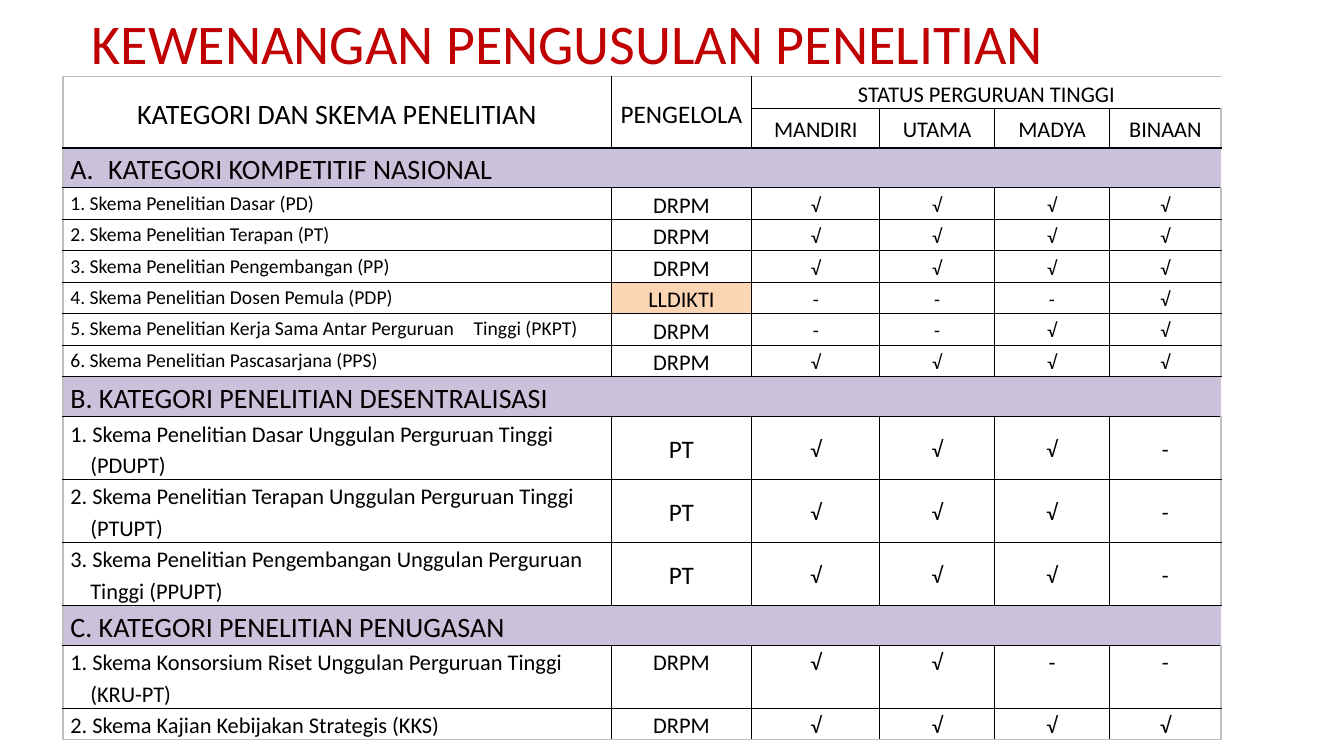
from dataclasses import dataclass

from lxml.etree import SubElement
from pptx import Presentation
from pptx.dml.color import RGBColor
from pptx.enum.text import MSO_ANCHOR, PP_ALIGN
from pptx.oxml.ns import qn
from pptx.util import Pt


@dataclass(frozen=True)
class Theme:
    """Colours and type sizes."""
    font: str = "Calibri"
    title: str = "C00000"
    ink: str = "000000"
    edge: str = "BFBFBF"
    band: str = "CCC1DA"
    mark: str = "FCD5B5"
    huge: int = 40
    head: int = 20
    large: int = 18
    body: int = 16
    small: int = 14


@dataclass(frozen=True)
class Group:
    """A research category and the looks of its rows."""
    name: str
    rows: tuple
    label: int
    owner: int
    tick: int
    anchor: MSO_ANCHOR
    auto: bool = False


THEME = Theme()
PX = 9525
COLS = (522, 134, 122, 109, 110, 106)
LINE, BAND = 30, 38
INSET, HANG, NUMBER, TAB = 7, 19, 36, 382
LEVELS = ("MANDIRI", "UTAMA", "MADYA", "BINAAN")
MID, TOP = MSO_ANCHOR.MIDDLE, MSO_ANCHOR.TOP
GROUPS = (
    Group("KATEGORI KOMPETITIF NASIONAL", (
        ("1. Skema Penelitian Dasar (PD)", "DRPM", "√√√√"),
        ("2. Skema Penelitian Terapan (PT)", "DRPM", "√√√√"),
        ("3. Skema Penelitian Pengembangan (PP)", "DRPM", "√√√√"),
        ("4. Skema Penelitian Dosen Pemula (PDP)", "LLDIKTI", "---√"),
        ("5. Skema Penelitian Kerja Sama Antar Perguruan\tTinggi (PKPT)",
         "DRPM", "--√√"),
        ("6. Skema Penelitian Pascasarjana (PPS)", "DRPM", "√√√√"),
    ), THEME.small, THEME.body, THEME.small, MID, True),
    Group("B. KATEGORI PENELITIAN DESENTRALISASI", (
        ("1. Skema Penelitian Dasar Unggulan Perguruan Tinggi\n(PDUPT)",
         "PT", "√√√-"),
        ("2. Skema Penelitian Terapan Unggulan Perguruan Tinggi\n(PTUPT)",
         "PT", "√√√-"),
        ("3. Skema Penelitian Pengembangan Unggulan Perguruan\nTinggi (PPUPT)",
         "PT", "√√√-"),
    ), THEME.body, THEME.large, THEME.body, MID),
    Group("C. KATEGORI PENELITIAN PENUGASAN", (
        ("1. Skema Konsorsium Riset Unggulan Perguruan Tinggi\n(KRU-PT)",
         "DRPM", "√√--"),
        ("2. Skema Kajian Kebijakan Strategis (KKS)", "DRPM", "√√√√"),
    ), THEME.body, THEME.body, THEME.body, TOP),
)


def style(para, size, color=THEME.ink, align=PP_ALIGN.LEFT, space=1.15):
    """Set the type and spacing of a paragraph."""
    para.font.name = THEME.font
    para.font.size = Pt(size)
    para.font.color.rgb = RGBColor.from_string(color)
    para.alignment = align
    para.line_spacing = space


def indent(para, left, first=0):
    """Indent a paragraph and return its properties."""
    props = para._p.get_or_add_pPr()
    props.set("marL", str(left * PX))
    props.set("indent", str(first * PX))
    return props


def insert(props, tag, before="a:defRPr"):
    """Add a paragraph property ahead of the font."""
    item = SubElement(props, qn(tag))
    props.find(qn(before)).addprevious(item)
    return item


def write(cell, text, size, align=PP_ALIGN.CENTER, anchor=MID):
    """Fill a cell, hanging any second line under the first."""
    cell.text_frame.text = text
    cell.vertical_anchor = anchor
    for index, para in enumerate(cell.text_frame.paragraphs):
        style(para, size, align=align)
        if index:
            indent(para, HANG)
        if "\t" in para.text:
            tabs = insert(indent(para, 0), "a:tabLst")
            SubElement(tabs, qn("a:tab"), pos=str(TAB * PX), algn="l")


def paint(cell, color):
    """Give a cell a solid fill."""
    cell.fill.solid()
    cell.fill.fore_color.rgb = RGBColor.from_string(color)


def frame(grid, bands, rows):
    """Rule the cells and clear their fill and margins."""
    def home(row, col):
        """Find the first cell of the span at a place."""
        if row in bands:
            return row, 0
        if row < 2 and col < 2:
            return 0, col
        return (0, 2) if row == 0 else (row, col)

    sides = (("a:lnL", 0, -1), ("a:lnR", 0, 1), ("a:lnT", -1, 0), ("a:lnB", 1, 0))
    for row in range(rows):
        for col in range(len(COLS)):
            cell = grid.cell(row, col)
            cell.margin_left = cell.margin_right = INSET * PX
            cell.margin_top = cell.margin_bottom = 0
            props = cell._tc.get_or_add_tcPr()
            for tag, down, across in sides:
                near = row + down, col + across
                inside = 0 <= near[0] < rows and 0 <= near[1] < len(COLS)
                if inside and home(*near) == home(row, col):
                    continue
                line = SubElement(props, qn(tag), w=str(Pt(1)))
                fill = SubElement(line, qn("a:solidFill"))
                color = THEME.ink if inside else THEME.edge
                SubElement(fill, qn("a:srgbClr"), val=color)
            cell.fill.background()


def header(grid):
    """Write the two header rows."""
    grid.cell(0, 0).merge(grid.cell(1, 0))
    grid.cell(0, 1).merge(grid.cell(1, 1))
    grid.cell(0, 2).merge(grid.cell(0, 5))
    write(grid.cell(0, 0), "KATEGORI DAN SKEMA PENELITIAN", THEME.head)
    write(grid.cell(0, 1), "PENGELOLA", THEME.large)
    write(grid.cell(0, 2), "STATUS PERGURUAN TINGGI", THEME.body)
    for col, level in enumerate(LEVELS, 2):
        write(grid.cell(1, col), level, THEME.body)


def section(grid, top, group):
    """Write a category band and the schemes below it."""
    band = grid.cell(top, 0)
    band.merge(grid.cell(top, len(COLS) - 1))
    write(band, group.name, THEME.head, PP_ALIGN.LEFT, TOP)
    paint(band, THEME.band)
    if group.auto:
        props = indent(band.text_frame.paragraphs[0], NUMBER, -NUMBER)
        insert(props, "a:buFont").set("typeface", "+mj-lt")
        insert(props, "a:buAutoNum").set("type", "alphaUcPeriod")
    for row, (label, owner, ticks) in enumerate(group.rows, top + 1):
        write(grid.cell(row, 0), label, group.label, PP_ALIGN.LEFT, TOP)
        write(grid.cell(row, 1), owner, group.owner, anchor=group.anchor)
        if owner == "LLDIKTI":
            paint(grid.cell(row, 1), THEME.mark)
        for col, tick in enumerate(ticks, 2):
            write(grid.cell(row, col), tick, group.tick, anchor=group.anchor)


def matrix(slide, left, top):
    """Place the table of schemes and statuses."""
    highs, bands = [LINE, BAND], []
    for group in GROUPS:
        bands.append(len(highs))
        highs.append(BAND)
        highs += [LINE * len(row[0].splitlines()) for row in group.rows]
    shape = slide.shapes.add_table(len(highs), len(COLS), left * PX, top * PX,
                                   sum(COLS) * PX, sum(highs) * PX)
    grid = shape.table
    grid.first_row = grid.horz_banding = False
    for plan in shape.element.iter(qn("a:tableStyleId")):
        plan.text = "{2D5ABB26-0587-4C30-8999-92F81FD0307C}"
    for col, wide in zip(grid.columns, COLS):
        col.width = wide * PX
    for row, high in zip(grid.rows, highs):
        row.height = high * PX
    frame(grid, bands, len(highs))
    header(grid)
    for top, group in zip(bands, GROUPS):
        section(grid, top, group)


def title(slide, left, top, wide, high):
    """Place the slide title."""
    box = slide.shapes.add_textbox(left * PX, top * PX, wide * PX, high * PX)
    box.text_frame.word_wrap = True
    box.text_frame.text = "KEWENANGAN PENGUSULAN PENELITIAN"
    style(box.text_frame.paragraphs[0], THEME.huge, THEME.title, space=0.9)


def main():
    """Build and save the slide."""
    deck = Presentation()
    deck.slide_width, deck.slide_height = 1280 * PX, 720 * PX
    slide = deck.slides.add_slide(deck.slide_layouts[6])
    title(slide, 78, 11, 1104, 38)
    matrix(slide, 60, 73)
    deck.save("out.pptx")


if __name__ == "__main__":
    main()
